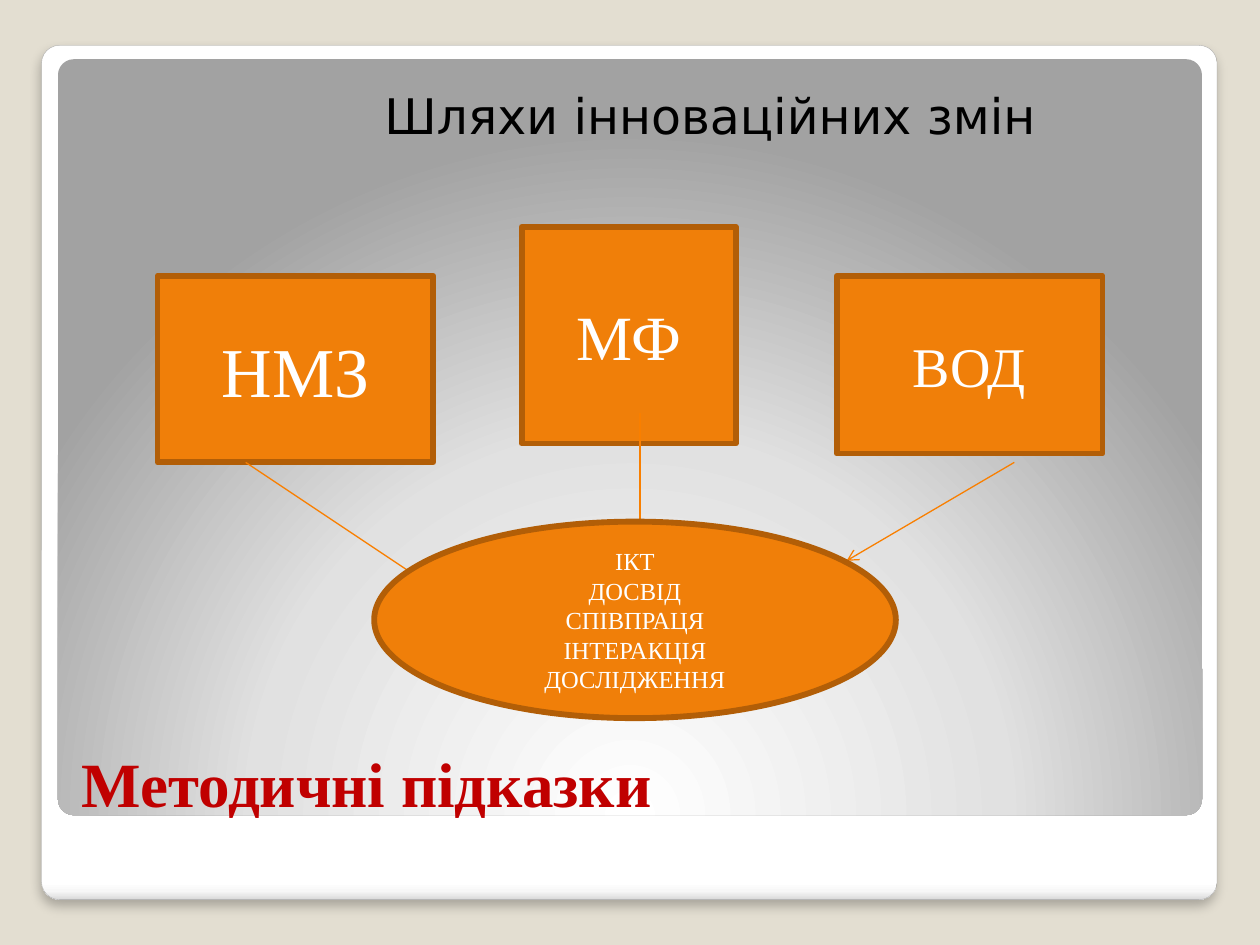
from dataclasses import dataclass

from lxml.etree import SubElement
from pptx import Presentation
from pptx.dml.color import RGBColor
from pptx.enum.shapes import MSO_CONNECTOR as Connector, MSO_SHAPE as Preset
from pptx.enum.text import MSO_ANCHOR as Anchor, PP_ALIGN as Align
from pptx.oxml.ns import qn
from pptx.util import Inches, Pt


@dataclass(frozen=True)
class Theme:
    background: str = "E3DED1"
    frame_line: str = "A4A4A4"
    shadow: str = "000000"
    fill: str = "F07F09"
    outline: str = "B25E07"
    arrow: str = "F97F00"
    light: str = "FFFFFF"
    dark: str = "000000"
    title: str = "C00000"
    serif: str = "Times New Roman"
    sans: str = "DejaVu Sans"
    title_size: int = 36
    heading_size: int = 28
    list_size: int = 14
    outline_width: float = 3.35
    arrow_width: float = 0.75
    frame_width: float = 0.16
    frame_stops: tuple = ((0, "FFFFFF"), (98, "FFFFFF"), (99, "F7F7F7"), (100, "DADADA"))
    panel_stops: tuple = ((0, "FFFFFF"), (55, "E1E1E1"), (100, "A2A2A2"))


THEME = Theme()
GRID = 0.1


@dataclass(frozen=True)
class Box:
    left: float
    top: float
    width: float
    height: float

    def point(self, column, row):
        return Inches(self.left + column * GRID), Inches(self.top + row * GRID)

    def cell(self, column, row, columns, rows):
        return Box(self.left + column * GRID, self.top + row * GRID, columns * GRID, rows * GRID)

    def place(self):
        return [Inches(value) for value in (self.left, self.top, self.width, self.height)]


def color(value):
    return RGBColor.from_string(value)


def add_xml(parent, tag, **attributes):
    return SubElement(parent, qn(tag), {key: str(value) for key, value in attributes.items()})


def add_run(paragraph, text, font, size, ink, bold=False):
    run = paragraph.add_run()
    run.text = text
    run.font.name, run.font.size, run.font.bold = font, Pt(size), bold
    run.font.color.rgb = color(ink)


def add_block(slide, preset, box):
    shape = slide.shapes.add_shape(preset, *box.place())
    shape.shadow.inherit = False
    return shape


def add_gradient(shape, stops):
    shape.fill.gradient()
    gradient = shape.element.spPr.find(qn("a:gradFill"))
    for child in list(gradient):
        gradient.remove(child)
    stop_list = add_xml(gradient, "a:gsLst")
    for position, value in stops:
        stop = add_xml(stop_list, "a:gs", pos=position * 1000)
        add_xml(stop, "a:srgbClr", val=value)
    return gradient


def add_frame(slide, box):
    frame = add_block(slide, Preset.ROUNDED_RECTANGLE, box)
    frame.adjustments[0] = 0.021
    add_xml(add_gradient(frame, THEME.frame_stops), "a:lin", ang=5400000, scaled=0)
    frame.line.color.rgb = color(THEME.frame_line)
    frame.line.width = Pt(THEME.frame_width)
    effects = frame.element.spPr.find(qn("a:effectLst"))
    shadow = add_xml(effects, "a:outerShdw", blurRad=Pt(6), dist=Pt(4), dir=5400000, rotWithShape=0)
    add_xml(add_xml(shadow, "a:srgbClr", val=THEME.shadow), "a:alpha", val=25000)

    panel = add_block(slide, Preset.ROUNDED_RECTANGLE, box.cell(1.3, 1.1, 90.8, 60))
    panel.adjustments[0] = 0.021
    circle = add_xml(add_gradient(panel, THEME.panel_stops), "a:path", path="circle")
    add_xml(circle, "a:fillToRect", l=50000, t=175000, r=50000, b=-75000)
    panel.line.fill.background()


def add_title(slide, box):
    frame = slide.shapes.add_textbox(*box.place()).text_frame
    frame.word_wrap = True
    frame.vertical_anchor = Anchor.BOTTOM
    add_run(frame.paragraphs[0], "Методичні підказки", THEME.serif,
            THEME.title_size, THEME.title, bold=True)


def add_heading(slide, box):
    frame = slide.shapes.add_textbox(*box.place()).text_frame
    frame.word_wrap = True
    frame.margin_left, frame.margin_top = Inches(0.2), Inches(0.1)
    paragraph = frame.paragraphs[0]
    paragraph.space_before = Pt(2.5)
    paragraph._p.get_or_add_pPr().set("marL", str(Inches(2.3)))
    add_run(paragraph, "Шляхи інноваційних змін", THEME.sans, THEME.heading_size, THEME.dark)


def add_node(slide, preset, box, lines, size):
    node = add_block(slide, preset, box)
    node.fill.solid()
    node.fill.fore_color.rgb = color(THEME.fill)
    node.line.color.rgb = color(THEME.outline)
    node.line.width = Pt(THEME.outline_width)
    frame = node.text_frame
    frame.word_wrap = True
    frame.vertical_anchor = Anchor.MIDDLE
    for index, text in enumerate(lines):
        paragraph = frame.add_paragraph() if index else frame.paragraphs[0]
        paragraph.alignment = Align.CENTER
        add_run(paragraph, text, THEME.serif, size, THEME.light)


def add_arrow(slide, start, end):
    arrow = slide.shapes.add_connector(Connector.STRAIGHT, *start, *end)
    arrow.line.color.rgb = color(THEME.arrow)
    arrow.line.width = Pt(THEME.arrow_width)
    add_xml(arrow.line._get_or_add_ln(), "a:tailEnd", type="arrow")
    add_xml(arrow.element.spPr, "a:effectLst")


def add_diagram(slide, box):
    sources = (
        ("НМЗ", 40, (0, 3.9, 21.9, 14.8)),
        ("МФ", 36, (28.9, 0, 17, 17.2)),
        ("ВОД", 32, (53.9, 3.9, 21.1, 14.1)),
    )
    for text, size, cell in sources:
        add_node(slide, Preset.RECTANGLE, box.cell(*cell), [text], size)
    arrows = (
        ((68, 18.7), (54.7, 26.5)),
        ((38.3, 14.8), (38.3, 24.2)),
        ((7, 18.7), (21.1, 28.1)),
    )
    for start, end in arrows:
        add_arrow(slide, box.point(*start), box.point(*end))
    results = ["ІКТ", "ДОСВІД", "СПІВПРАЦЯ", "ІНТЕРАКЦІЯ", "ДОСЛІДЖЕННЯ"]
    add_node(slide, Preset.OVAL, box.cell(17.2, 23.4, 41.4, 15.6), results, THEME.list_size)


def main():
    presentation = Presentation()
    page = Box(0, 0, 10, 7.5)
    presentation.slide_width, presentation.slide_height = Inches(page.width), Inches(page.height)
    slide = presentation.slides.add_slide(presentation.slide_layouts[6])
    background = slide.background.fill
    background.solid()
    background.fore_color.rgb = color(THEME.background)
    add_frame(slide, page.cell(3.3, 3.6, 93.3, 67.8))
    add_title(slide, page.cell(5.5, 54.5, 89.5, 11.1))
    add_heading(slide, page.cell(5.5, 5.8, 89.5, 45.8))
    add_diagram(slide, page.cell(12.5, 18, 75, 39))
    presentation.save("out.pptx")


if __name__ == "__main__":
    main()
